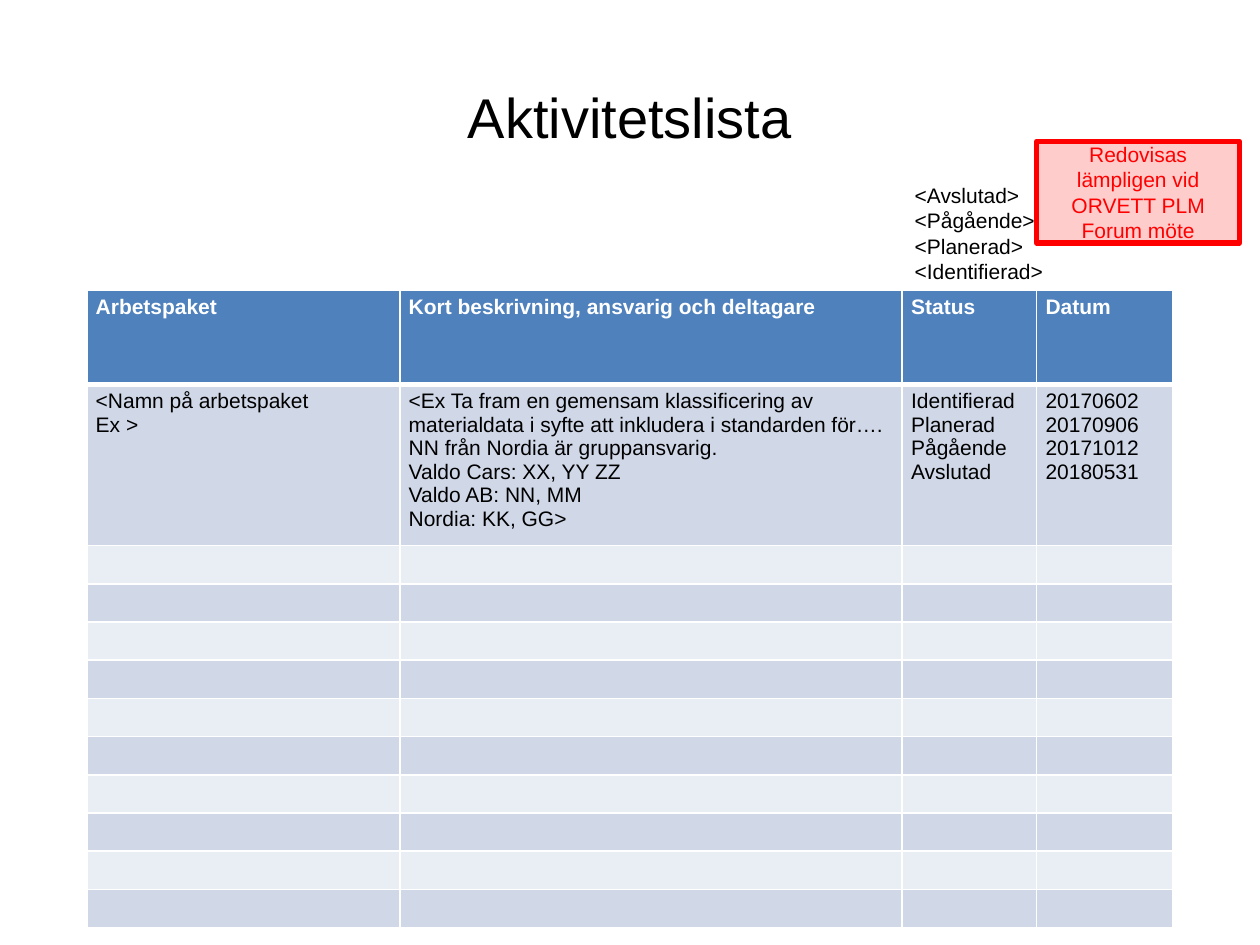
from lxml.etree import SubElement
from pptx import Presentation
from pptx.dml.color import RGBColor
from pptx.enum.shapes import MSO_SHAPE
from pptx.enum.text import MSO_ANCHOR, PP_ALIGN
from pptx.oxml.ns import qn
from pptx.util import Cm, Pt

COLORS = {
    "text": "000000",
    "white": "FFFFFF",
    "header": "4F81BD",
    "odd_row": "D0D8E8",
    "even_row": "E9EDF4",
    "alert": "FF0000",
    "alert_fill": "FFCCCC",
}
BODY_FONT = {"name": "Arial", "size": Pt(12), "bold": False}
HEADER_FONT = {**BODY_FONT, "bold": True}
TITLE_FONT = {**BODY_FONT, "size": Pt(32)}

COLUMN_WIDTHS = (6.31, 10.13, 2.71, 2.75)
HEADER_HEIGHT, ACTIVITY_HEIGHT, EMPTY_HEIGHT = 1.9, 3.0, 0.77
EMPTY_ROWS = 10
HEADINGS = ["Arbetspaket", "Kort beskrivning, ansvarig och deltagare", "Status", "Datum"]
ACTIVITY = [
    ["<Namn på arbetspaket", "Ex >"],
    [
        "<Ex Ta fram en gemensam klassificering av materialdata i syfte att "
        "inkludera i standarden för…. NN från Nordia är gruppansvarig.",
        "Valdo Cars: XX, YY ZZ",
        "Valdo AB: NN, MM",
        "Nordia: KK, GG>",
    ],
    ["Identifierad", "Planerad", "Pågående", "Avslutad"],
    ["20170602", "20170906", "20171012", "20180531"],
]
STATUSES = ["<Avslutad>", "<Pågående>", "<Planerad>", "<Identifierad>"]


def rgb(color):
    return RGBColor.from_string(COLORS[color])


def apply(target, values):
    for name, value in values.items():
        setattr(target, name, value)


def write(frame, lines, font, color, alignment=PP_ALIGN.LEFT):
    for index, line in enumerate(lines):
        paragraph = frame.paragraphs[0] if index == 0 else frame.add_paragraph()
        paragraph.alignment = alignment
        run = paragraph.add_run()
        run.text = line
        apply(run.font, font)
        run.font.color.rgb = rgb(color)


def style_cell(cell, fill, bottom_width):
    apply(cell, {"margin_left": Cm(0.18), "margin_right": Cm(0.18),
                 "margin_top": Cm(0.1), "margin_bottom": Cm(0.1)})
    properties = cell._tc.get_or_add_tcPr()
    for side, width in (("L", 1), ("R", 1), ("T", 1), ("B", bottom_width)):
        border = SubElement(properties, qn(f"a:ln{side}"), w=str(Pt(width)))
        border_fill = SubElement(border, qn("a:solidFill"))
        SubElement(border_fill, qn("a:srgbClr"), val=COLORS["white"])
    cell.fill.solid()
    cell.fill.fore_color.rgb = rgb(fill)


def add_title(slide, left, top, width, height):
    title = slide.shapes.add_textbox(Cm(left), Cm(top), Cm(width), Cm(height))
    apply(title.text_frame, {"word_wrap": True, "vertical_anchor": MSO_ANCHOR.MIDDLE})
    write(title.text_frame, ["Aktivitetslista"], TITLE_FONT, "text", PP_ALIGN.CENTER)


def add_activity_table(slide, left, top, width, height):
    contents = [[[heading] for heading in HEADINGS], ACTIVITY]
    contents += [[[] for _ in HEADINGS] for _ in range(EMPTY_ROWS)]
    activities = slide.shapes.add_table(
        len(contents), len(HEADINGS), Cm(left), Cm(top), Cm(width), Cm(height)).table
    for column, share in zip(activities.columns, COLUMN_WIDTHS):
        column.width = Cm(width * share / sum(COLUMN_WIDTHS))
    row_heights = [HEADER_HEIGHT, ACTIVITY_HEIGHT] + [EMPTY_HEIGHT] * EMPTY_ROWS
    for index, (row, row_height, entries) in enumerate(
            zip(activities.rows, row_heights, contents)):
        row.height = Cm(row_height)
        is_header = index == 0
        fill = "header" if is_header else "odd_row" if index % 2 else "even_row"
        font = HEADER_FONT if is_header else BODY_FONT
        for cell, lines in zip(row.cells, entries):
            style_cell(cell, fill, 3 if is_header else 1)
            write(cell.text_frame, lines, font, "white" if is_header else "text")
            for paragraph in cell.text_frame.paragraphs:
                SubElement(paragraph._p, qn("a:endParaRPr"), sz="1200")


def add_status_legend(slide, left, top, width, height):
    legend = slide.shapes.add_textbox(Cm(left), Cm(top), Cm(width), Cm(height))
    legend.text_frame.word_wrap = True
    write(legend.text_frame, STATUSES, BODY_FONT, "text")


def add_reporting_note(slide, left, top, width, height):
    note = slide.shapes.add_shape(
        MSO_SHAPE.RECTANGLE, Cm(left), Cm(top), Cm(width), Cm(height))
    note.shadow.inherit = False
    note.fill.solid()
    note.fill.fore_color.rgb = rgb("alert_fill")
    note.line.color.rgb = rgb("alert")
    note.line.width = Pt(3)
    apply(note.text_frame, {"word_wrap": True, "vertical_anchor": MSO_ANCHOR.MIDDLE,
                            "margin_top": 0, "margin_bottom": 0})
    write(note.text_frame, ["Redovisas lämpligen vid ORVETT PLM Forum möte"],
          BODY_FONT, "alert", PP_ALIGN.CENTER)


def main():
    presentation = Presentation()
    apply(presentation, {"slide_width": Cm(25.4), "slide_height": Cm(19.05)})
    slide = presentation.slides.add_slide(presentation.slide_layouts[6])
    add_title(slide, 1.27, 0.76, 22.86, 3.18)
    add_activity_table(slide, 1.75, 5.85, 21.9, 12.6)
    add_status_legend(slide, 18.19, 3.56, 3.12, 2.31)
    add_reporting_note(slide, 20.9, 2.85, 4.09, 2.05)
    presentation.save("out.pptx")


if __name__ == "__main__":
    main()
